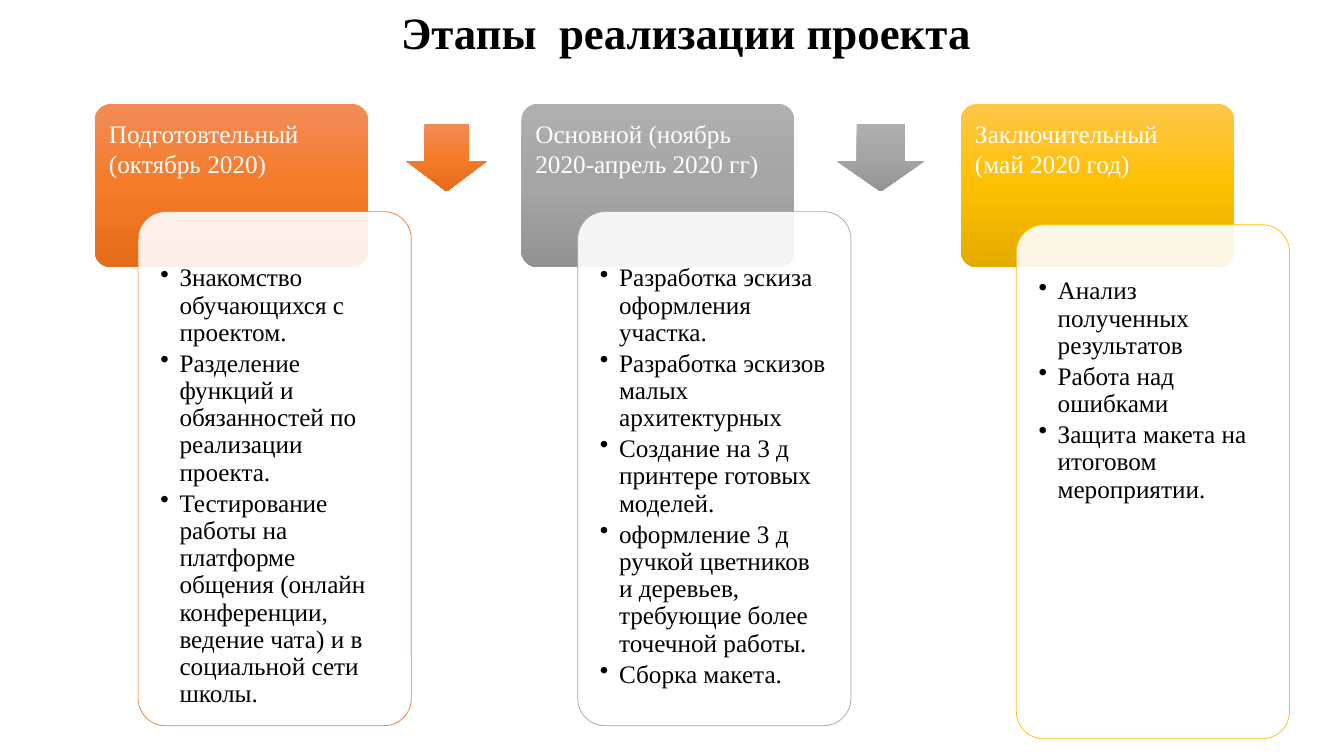
from copy import deepcopy

from lxml.etree import SubElement
from pptx import Presentation
from pptx.dml.color import RGBColor
from pptx.enum.shapes import MSO_SHAPE
from pptx.enum.text import MSO_ANCHOR, PP_ALIGN
from pptx.oxml.ns import qn
from pptx.util import Inches, Pt

FONT = "Times New Roman"
BLACK = RGBColor(0x00, 0x00, 0x00)
WHITE = RGBColor(0xFF, 0xFF, 0xFF)
ORANGE_LINE = RGBColor(0xED, 0x7D, 0x31)
GRAY = RGBColor(0xA5, 0xA5, 0xA5)
GOLD = RGBColor(0xFF, 0xC0, 0x00)
ORANGE_SHADES = (RGBColor(0xF1, 0x8C, 0x57), RGBColor(0xF6, 0x7B, 0x28), RGBColor(0xE5, 0x6C, 0x19))
GRAY_SHADES = (RGBColor(0xAF, 0xAF, 0xAF), GRAY, RGBColor(0x93, 0x93, 0x93))
GOLD_SHADES = (RGBColor(0xFF, 0xC6, 0x4B), GOLD, RGBColor(0xE3, 0xAB, 0x00))

STAGE_WIDTH = 2.71
HEADER_TOP, HEADER_HEIGHT = 1.03, 1.62
CARD_HEIGHT = 5.1
CARD_PADDING = 0.08
TEXT_INSET = 0.14
BULLET_INDENT = 0.19

STAGES = [
    {
        "left": 0.94, "card": (1.37, 2.1), "arrow": (4.03, 0.8),
        "shades": ORANGE_SHADES, "outline": ORANGE_LINE,
        "heading": ["Подготовтельный", "(октябрь 2020)"],
        "tasks": [
            "Знакомство обучающихся с проектом.",
            "Разделение функций и обязанностей по реализации проекта.",
            "Тестирование работы на платформе общения (онлайн конференции, "
            "ведение чата) и в социальной сети школы.",
        ],
    },
    {
        "left": 5.17, "card": (5.73, 2.1), "arrow": (8.3, 0.87),
        "shades": GRAY_SHADES, "outline": GRAY,
        "heading": ["Основной (ноябрь 2020-апрель 2020 гг)"],
        "tasks": [
            "Разработка эскиза оформления участка.",
            "Разработка эскизов малых архитектурных",
            "Создание на 3 д принтере готовых моделей.",
            "оформление 3 д ручкой цветников и деревьев, требующие более точечной работы.",
            "Сборка макета.",
        ],
    },
    {
        "left": 9.53, "card": (10.08, 2.23), "arrow": None,
        "shades": GOLD_SHADES, "outline": GOLD,
        "heading": ["Заключительный", "(май 2020 год)"],
        "tasks": [
            "Анализ полученных результатов",
            "Работа над ошибками",
            "Защита макета на итоговом мероприятии.",
        ],
    },
]


def add_preset(slide, preset, box, adjustments):
    shape = slide.shapes.add_shape(preset, *map(Inches, box))
    shape.shadow.inherit = False
    for index, value in enumerate(adjustments):
        shape.adjustments[index] = value
    return shape


def fill_with_shades(shape, shades):
    shape.line.fill.background()
    shape.fill.gradient()
    shape.fill.gradient_angle = 270
    stop_list = shape._element.spPr.find(".//" + qn("a:gsLst"))
    stop_list.insert(1, deepcopy(stop_list[0]))
    for stop, shade, position in zip(shape.fill.gradient_stops, shades, (0, 0.5, 1)):
        stop.color.rgb = shade
        stop.position = position


def add_text(slide, box, lines, size, color, insets, bold=False, wrap=True):
    frame = slide.shapes.add_textbox(*map(Inches, box)).text_frame
    frame.word_wrap = wrap
    frame.vertical_anchor = MSO_ANCHOR.TOP
    frame.margin_left, frame.margin_top, frame.margin_right, frame.margin_bottom = map(Inches, insets)
    for index, line in enumerate(lines):
        paragraph = frame.paragraphs[0] if index == 0 else frame.add_paragraph()
        run = paragraph.add_run()
        run.text = line
        run.font.name = FONT
        run.font.size = Pt(size)
        run.font.bold = bold
        run.font.color.rgb = color
    return frame


def add_bullet(paragraph):
    properties = paragraph._p.get_or_add_pPr()
    properties.set("marL", str(Inches(BULLET_INDENT)))
    properties.set("indent", str(-Inches(BULLET_INDENT)))
    SubElement(properties, qn("a:buChar")).set("char", "•")
    paragraph.line_spacing = 0.9
    paragraph.space_after = Pt(2.7)


def add_title(slide, box):
    frame = add_text(slide, box, ["Этапы  реализации проекта"], 32, BLACK,
                     (0.1, 0.05, 0.1, 0.05), bold=True, wrap=False)
    frame.paragraphs[0].alignment = PP_ALIGN.CENTER


def add_header(slide, box, stage):
    fill_with_shades(add_preset(slide, MSO_SHAPE.ROUNDED_RECTANGLE, box, [0.1]), stage["shades"])
    left, top, width, height = box
    add_text(slide, (left, top, width, height * 2 / 3), stage["heading"], 18, WHITE,
             (TEXT_INSET, TEXT_INSET, TEXT_INSET, 0.07))


def add_card(slide, box, stage):
    card = add_preset(slide, MSO_SHAPE.ROUNDED_RECTANGLE, box, [0.1])
    card.fill.solid()
    card.fill.fore_color.rgb = WHITE
    color = card._element.spPr.find(qn("a:solidFill"))[0]
    SubElement(color, qn("a:alpha")).set("val", "90000")
    card.line.color.rgb = stage["outline"]
    card.line.width = Pt(0.5)
    left, top, width, height = box
    inner = (left + CARD_PADDING, top + CARD_PADDING,
             width - 2 * CARD_PADDING, height - 2 * CARD_PADDING)
    frame = add_text(slide, inner, stage["tasks"], 18, BLACK,
                     (TEXT_INSET, 0.45, TEXT_INSET, TEXT_INSET))
    for paragraph in frame.paragraphs:
        add_bullet(paragraph)


def add_stage(slide, stage):
    add_header(slide, (stage["left"], HEADER_TOP, STAGE_WIDTH, HEADER_HEIGHT), stage)
    add_card(slide, (*stage["card"], STAGE_WIDTH, CARD_HEIGHT), stage)
    if stage["arrow"]:
        left, width = stage["arrow"]
        arrow = add_preset(slide, MSO_SHAPE.DOWN_ARROW,
                           (left, HEADER_TOP + 0.2, width, 0.67), [0.55, 0.45])
        fill_with_shades(arrow, stage["shades"])


def main():
    presentation = Presentation()
    presentation.slide_width = Inches(13.33)
    presentation.slide_height = Inches(7.5)
    slide = presentation.slides.add_slide(presentation.slide_layouts[6])
    add_title(slide, (3.85, 0, 5.91, 0.64))
    for stage in STAGES:
        add_stage(slide, stage)
    presentation.save("out.pptx")


if __name__ == "__main__":
    main()
